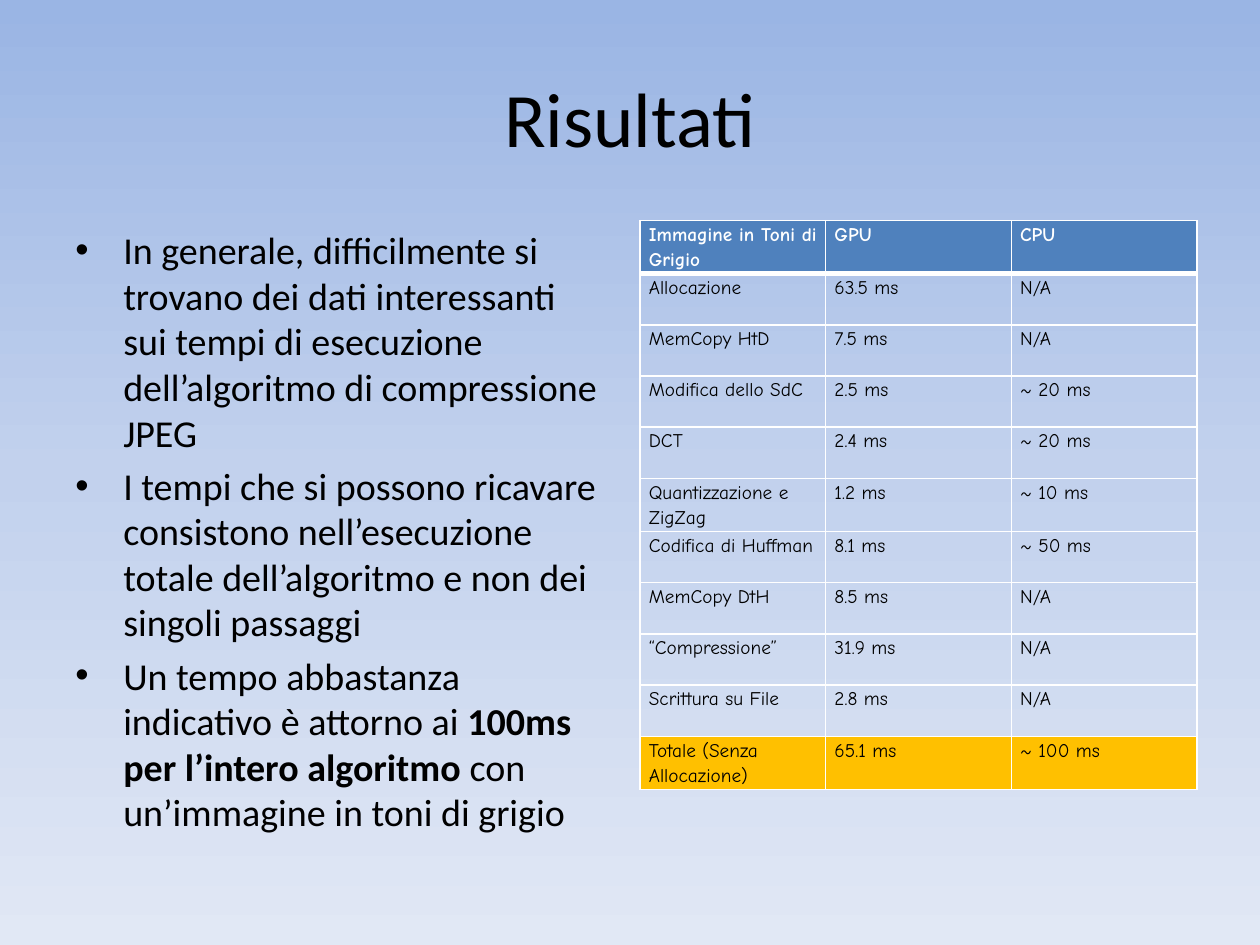
from copy import deepcopy

from lxml import etree
from pptx import Presentation
from pptx.dml.color import RGBColor
from pptx.enum.text import MSO_ANCHOR, PP_ALIGN
from pptx.oxml.ns import qn
from pptx.util import Inches, Pt

MIDDLE = MSO_ANCHOR.MIDDLE
CENTER = PP_ALIGN.CENTER

BLACK = RGBColor(0x00, 0x00, 0x00)
WHITE = RGBColor(0xFF, 0xFF, 0xFF)
HEADER_BLUE = RGBColor(0x4F, 0x81, 0xBD)
TOTAL_YELLOW = RGBColor(0xFF, 0xC0, 0x00)
BACKGROUND_STOPS = [
    (0, RGBColor(0x9A, 0xB5, 0xE4)),
    (0.5, RGBColor(0xC2, 0xD1, 0xED)),
    (1, RGBColor(0xE1, 0xE8, 0xF5)),
]

TEXT_FONT = "Calibri"
TABLE_FONT = "Comic Neue"

# Each point is a list of (text, bold) pieces.
POINTS = [
    [("In generale, difficilmente si trovano dei dati interessanti sui tempi "
      "di esecuzione dell’algoritmo di compressione JPEG", False)],
    [("I tempi che si possono ricavare consistono nell’esecuzione totale "
      "dell’algoritmo e non dei singoli passaggi", False)],
    [("Un tempo abbastanza indicativo è attorno ai ", False),
     ("100ms per l’intero algoritmo ", True),
     ("con un’immagine in toni di grigio", False)],
]

TIMINGS = [
    ("Immagine in Toni di Grigio", "GPU", "CPU"),
    ("Allocazione", "63.5 ms", "N/A"),
    ("MemCopy HtD", "7.5 ms", "N/A"),
    ("Modifica dello SdC", "2.5 ms", "~ 20 ms"),
    ("DCT", "2.4 ms", "~ 20 ms"),
    ("Quantizzazione e ZigZag", "1.2 ms", "~ 10 ms"),
    ("Codifica di Huffman", "8.1 ms", "~ 50 ms"),
    ("MemCopy DtH", "8.5 ms", "N/A"),
    ("“Compressione”", "31.9 ms", "N/A"),
    ("Scrittura su File", "2.8 ms", "N/A"),
    ("Totale (Senza Allocazione)", "65.1 ms", "~ 100 ms"),
]


def set_font(font, name, size, color, bold=None):
    font.name = name
    font.size = Pt(size)
    font.color.rgb = color
    font.bold = bold


def paint_background(slide):
    fill = slide.background.fill
    fill.gradient()
    fill.gradient_angle = 270
    stop_list = fill.gradient_stops[0]._gs.getparent()
    stop_list.append(deepcopy(stop_list[-1]))
    for stop, (position, color) in zip(fill.gradient_stops, BACKGROUND_STOPS):
        stop.position = position
        stop.color.rgb = color


def add_title(slide, left, top, width, height):
    frame = slide.shapes.add_textbox(left, top, width, height).text_frame
    frame.word_wrap = True
    frame.vertical_anchor = MIDDLE
    paragraph = frame.paragraphs[0]
    paragraph.text = "Risultati"
    paragraph.alignment = CENTER
    set_font(paragraph.font, TEXT_FONT, 44, BLACK)


def set_bullet(paragraph):
    properties = paragraph._p.get_or_add_pPr()
    properties.set("marL", str(Inches(0.38)))
    properties.set("indent", str(-Inches(0.38)))
    etree.SubElement(properties, qn("a:buFont"), typeface="Arial")
    etree.SubElement(properties, qn("a:buChar"), char="•")


def add_points(slide, left, top, width, height):
    frame = slide.shapes.add_textbox(left, top, width, height).text_frame
    frame.word_wrap = True
    for index, pieces in enumerate(POINTS):
        paragraph = frame.add_paragraph() if index else frame.paragraphs[0]
        paragraph.space_before = Pt(4.3)
        set_bullet(paragraph)
        for text, bold in pieces:
            run = paragraph.add_run()
            run.text = text
            set_font(run.font, TEXT_FONT, 21.7, BLACK, bold)


def set_borders(cell, top_width, bottom_width):
    properties = cell._tc.get_or_add_tcPr()
    widths = {"a:lnL": 1, "a:lnR": 1, "a:lnT": top_width, "a:lnB": bottom_width}
    for index, (tag, width) in enumerate(widths.items()):
        line = etree.Element(qn(tag), w=str(Pt(width)))
        fill = etree.SubElement(line, qn("a:solidFill"))
        etree.SubElement(fill, qn("a:srgbClr"), val=str(WHITE))
        properties.insert(index, line)


def fill_cell(cell, text, row_index):
    is_header = row_index == 0
    is_total = row_index == len(TIMINGS) - 1
    cell.margin_left = cell.margin_right = Inches(0.07)
    cell.margin_top = cell.margin_bottom = 0
    if is_header or is_total:
        cell.fill.solid()
        cell.fill.fore_color.rgb = HEADER_BLUE if is_header else TOTAL_YELLOW
    else:
        cell.fill.background()
    set_borders(cell, 3 if row_index == 1 else 1, 3 if is_header else 1)
    paragraph = cell.text_frame.paragraphs[0]
    paragraph.text = text
    paragraph.line_spacing = 1.15
    set_font(paragraph.font, TABLE_FONT, 11,
             WHITE if is_header else BLACK, is_header)


def add_timings(slide, left, top, width, height):
    table = slide.shapes.add_table(
        len(TIMINGS), len(TIMINGS[0]), left, top, width, height).table
    table.horz_banding = False
    for row_index, values in enumerate(TIMINGS):
        for column_index, text in enumerate(values):
            fill_cell(table.cell(row_index, column_index), text, row_index)


def main():
    presentation = Presentation()
    presentation.slide_width = Inches(10)
    presentation.slide_height = Inches(7.5)
    slide = presentation.slides.add_slide(presentation.slide_layouts[6])
    paint_background(slide)
    add_title(slide, Inches(0.5), Inches(0.3), Inches(9), Inches(1.25))
    add_points(slide, Inches(0.5), Inches(1.75), Inches(4.42), Inches(4.95))
    add_timings(slide, Inches(5.08), Inches(1.75), Inches(4.42), Inches(4.47))
    presentation.save("out.pptx")


if __name__ == "__main__":
    main()
